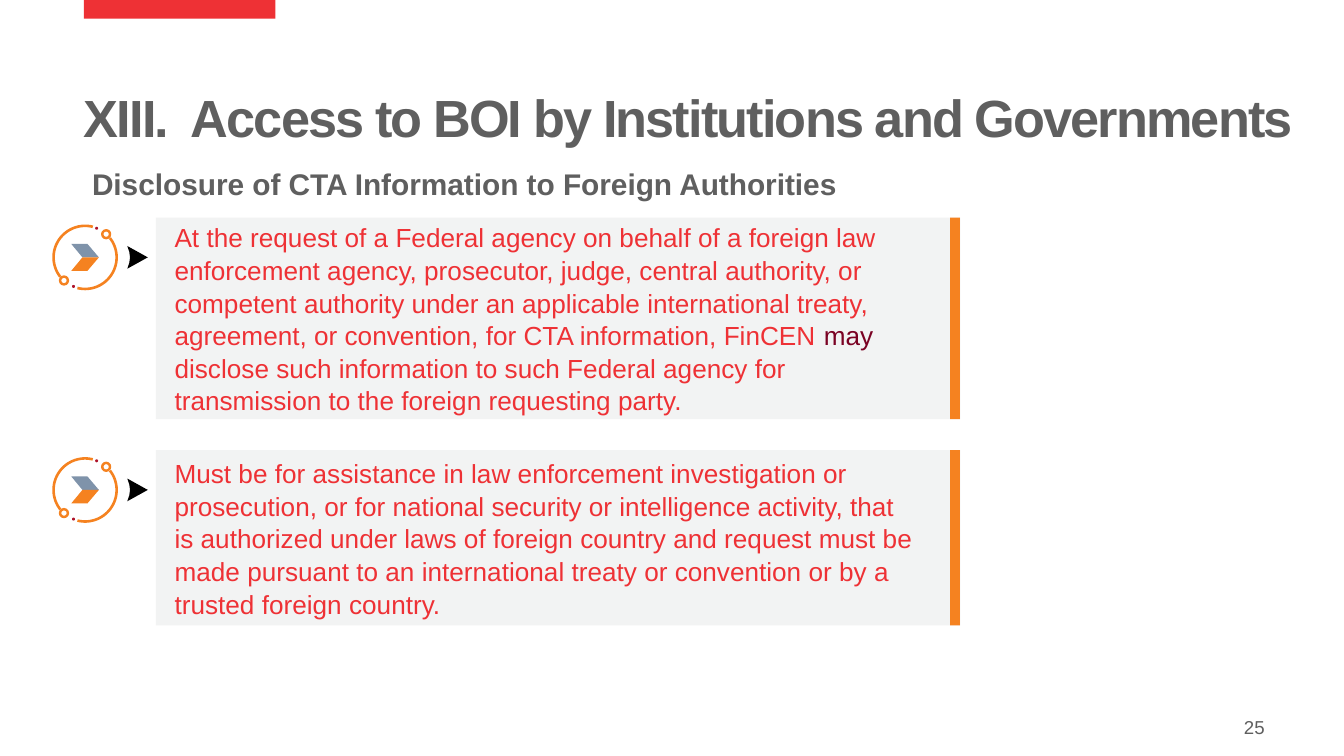
from math import cos, radians, sin

from pptx import Presentation
from pptx.dml.color import RGBColor
from pptx.enum.shapes import MSO_SHAPE
from pptx.enum.text import MSO_ANCHOR, PP_ALIGN
from pptx.util import Pt

COLORS = {
    "red": "EE3135",
    "maroon": "7A0223",
    "dot": "AE132A",
    "orange": "F58220",
    "slate": "7F93AA",
    "gray": "5F5F5F",
    "panel": "F2F3F3",
    "white": "FFFFFF",
    "black": "000000",
}
FONT = "Arial"
PANEL_LEFT, PANEL_WIDTH = 83.5, 431
BAR_LEFT, BAR_WIDTH = 509, 5.25
ICON_X, ICON_DROP = 45.6, 21.3
PANELS = [
    (116.6, 108, [
        ("At the request of a Federal agency on behalf of a foreign law enforcement agency, "
         "prosecutor, judge, central authority, or competent authority under an applicable "
         "international treaty, agreement, or convention, for CTA information, FinCEN ", "red"),
        ("may", "maroon"),
        (" disclose such information to such Federal agency for transmission to the foreign "
         "requesting party.", "red"),
    ]),
    (241.2, 93.8, [
        ("Must be for assistance in law enforcement investigation or prosecution, or for "
         "national security or intelligence activity, that is authorized under laws of foreign "
         "country and request must be made pursuant to an international treaty or convention "
         "or by a trusted foreign country.", "red"),
    ]),
]


def rgb(name):
    return RGBColor.from_string(COLORS[name])


def paint(shape, fill, line=None, line_width=1):
    shape.shadow.inherit = False
    shape.fill.solid()
    shape.fill.fore_color.rgb = rgb(fill)
    if line:
        shape.line.color.rgb = rgb(line)
        shape.line.width = Pt(line_width)
    else:
        shape.line.fill.background()


def add_rectangle(slide, left, top, width, height, fill):
    shape = slide.shapes.add_shape(
        MSO_SHAPE.RECTANGLE, Pt(left), Pt(top), Pt(width), Pt(height))
    paint(shape, fill)
    return shape


def add_circle(slide, x, y, radius, fill, line=None, line_width=1):
    shape = slide.shapes.add_shape(
        MSO_SHAPE.OVAL, Pt(x - radius), Pt(y - radius), Pt(2 * radius), Pt(2 * radius))
    paint(shape, fill, line, line_width)


def add_polygon(slide, x, y, offsets, fill):
    """Draw a closed outline whose points are offsets from (x, y)."""
    points = [(Pt(x + dx), Pt(y + dy)) for dx, dy in offsets]
    builder = slide.shapes.build_freeform(*points[0], scale=1.0)
    builder.add_line_segments(points[1:], close=True)
    paint(builder.convert_to_shape(), fill)


def write(shape, runs, size, bold=False, align=PP_ALIGN.LEFT, anchor=MSO_ANCHOR.TOP,
          margins=(0, 0, 0, 0), line_spacing=1.0):
    """Fill a shape with one paragraph; margins are left, top, right, bottom."""
    frame = shape.text_frame
    frame.word_wrap = True
    frame.vertical_anchor = anchor
    (frame.margin_left, frame.margin_top,
     frame.margin_right, frame.margin_bottom) = map(Pt, margins)
    paragraph = frame.paragraphs[0]
    paragraph.alignment = align
    paragraph.line_spacing = line_spacing
    for text, color in runs:
        run = paragraph.add_run()
        run.text = text
        run.font.name = FONT
        run.font.size = Pt(size)
        run.font.bold = bold
        run.font.color.rgb = rgb(color)
    return paragraph


def add_text(slide, left, top, width, height, text, size, **style):
    box = slide.shapes.add_textbox(Pt(left), Pt(top), Pt(width), Pt(height))
    return write(box, [(text, "gray")], size, **style)


def arc_band(start, end, inner=16.2, outer=17.6, step=2):
    angles = [radians(angle) for angle in range(start, end + 1, step)]
    return ([(outer * cos(a), outer * sin(a)) for a in angles]
            + [(inner * cos(a), inner * sin(a)) for a in reversed(angles)])


def add_icon(slide, x, y):
    add_circle(slide, x, y, 21.6, "white", "white")
    for turn, side in ((0, -1), (180, 1)):
        add_polygon(slide, x, y, arc_band(142 + turn, 284 + turn), "orange")
        add_circle(slide, x + side * 11.3, y - side * 12.4, 2.1, "white", "orange", 1.3)
        add_circle(slide, x - side * 6.2, y + side * 15.6, 0.8, "dot")
    for side, color in ((-1, "slate"), (1, "orange")):
        add_polygon(slide, x, y,
                    [(-7.4, side * 7.2), (1.3, side * 7.2), (7.4, 0), (-1.4, 0)], color)


def add_panel(slide, top, height, runs):
    icon_y = top + ICON_DROP
    add_icon(slide, ICON_X, icon_y)
    panel = add_rectangle(slide, PANEL_LEFT, top, PANEL_WIDTH, height, "panel")
    write(panel, runs, 14, anchor=MSO_ANCHOR.MIDDLE,
          margins=(10, 2.2, 21.6, 2.2), line_spacing=1.04)
    add_rectangle(slide, BAR_LEFT, top, BAR_WIDTH, height, "orange")
    add_polygon(slide, ICON_X, icon_y,
                [(22.6, -6.1), (23.7, -3), (24.1, 0), (23.7, 3), (22.6, 6.1), (33.6, 0)],
                "black")


def main():
    presentation = Presentation()
    presentation.slide_width, presentation.slide_height = Pt(720), Pt(405)
    slide = presentation.slides.add_slide(presentation.slide_layouts[6])

    add_rectangle(slide, 45, 0, 102.5, 10, "red")
    title = add_text(slide, 45, 49.7, 657, 36,
                     "XIII.  Access to BOI by Institutions and Governments", 28,
                     bold=True, line_spacing=0.9)
    title.runs[0].font._element.set("spc", "-100")
    add_text(slide, 49.3, 88.8, 633, 24,
             "Disclosure of CTA Information to Foreign Authorities", 16, bold=True)
    for top, height, runs in PANELS:
        add_panel(slide, top, height, runs)
    add_text(slide, 613.5, 381.6, 64, 16, "25", 10,
             align=PP_ALIGN.RIGHT, anchor=MSO_ANCHOR.MIDDLE)

    presentation.save("out.pptx")


if __name__ == "__main__":
    main()
